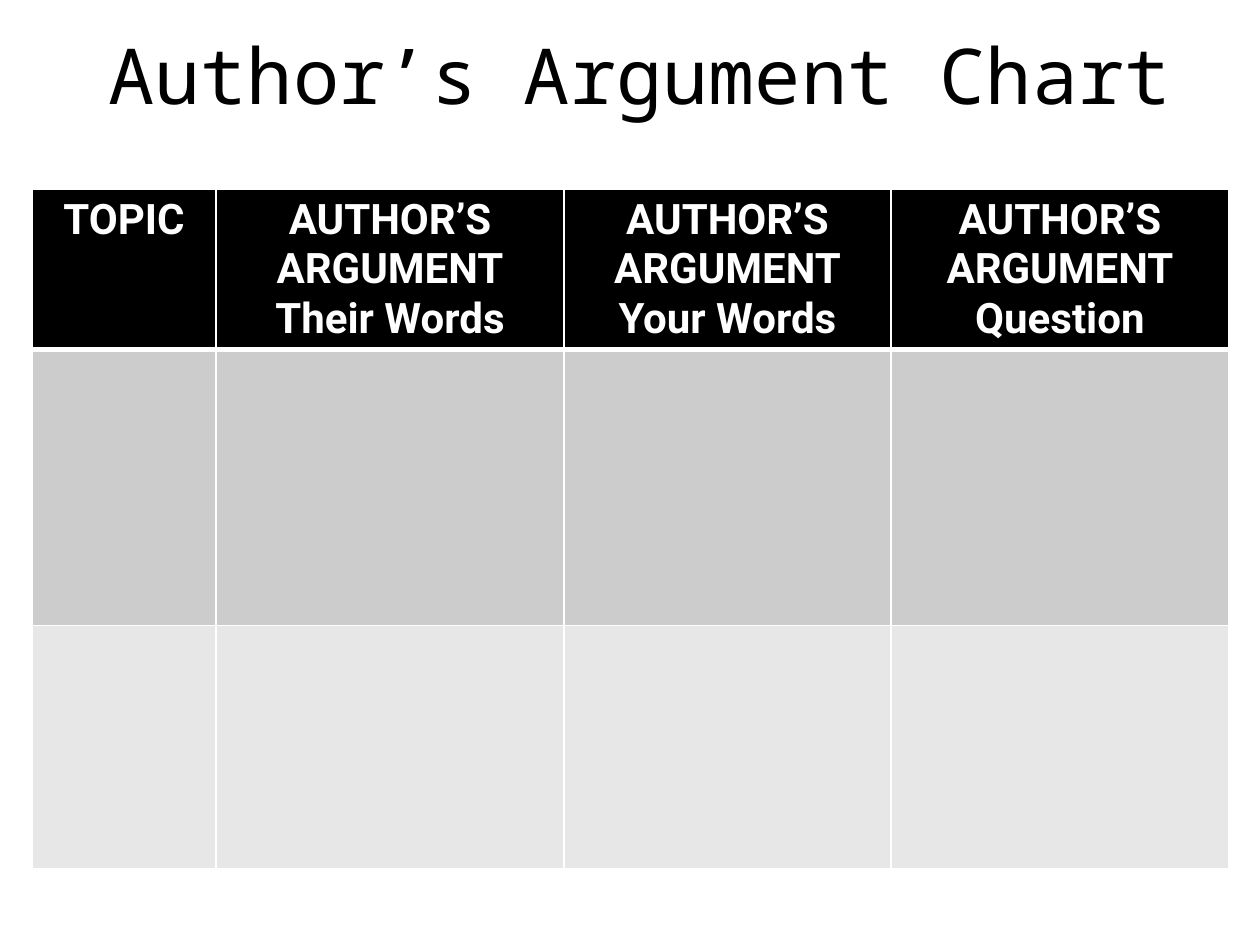
from dataclasses import dataclass

from lxml.etree import SubElement
from pptx import Presentation
from pptx.dml.color import RGBColor as Color
from pptx.enum.text import MSO_ANCHOR as Anchor, PP_ALIGN as Align
from pptx.oxml.ns import qn
from pptx.util import Emu, Pt

PX_PER_INCH = 126


def px(length):
    return Emu(round(length * 914400 / PX_PER_INCH))


@dataclass(frozen=True)
class Theme:
    title_font: str = "Noto Sans Mono"
    header_font: str = "Roboto"
    title_size: int = 44
    header_size: int = 24
    ink: str = "000000"
    paper: str = "FFFFFF"
    row_fills: tuple = ("000000", "CCCCCC", "E7E7E7")
    thin_line: int = 1
    thick_line: int = 3


class SlideBuilder:
    def __init__(self, slide, theme):
        self.slide = slide
        self.theme = theme

    def format_text(self, text_frame, font, size, color, bold=False):
        for paragraph in text_frame.paragraphs:
            paragraph.alignment = Align.CENTER
            for run in paragraph.runs:
                run.font.name = font
                run.font.size = Pt(size)
                run.font.bold = bold
                run.font.color.rgb = Color.from_string(color)

    def title(self, text, left, top, width, height):
        shape = self.slide.shapes.title
        shape.left, shape.top = px(left), px(top)
        shape.width, shape.height = px(width), px(height)
        shape.text_frame.text = text
        shape.text_frame.vertical_anchor = Anchor.MIDDLE
        self.format_text(shape.text_frame, self.theme.title_font,
                         self.theme.title_size, self.theme.ink)

    def cell_border(self, cell, side, points):
        properties = cell._tc.get_or_add_tcPr()
        line = SubElement(properties, qn(f"a:ln{side}"), w=str(Pt(points)))
        fill = SubElement(line, qn("a:solidFill"))
        SubElement(fill, qn("a:srgbClr"), val=self.theme.paper)

    def table(self, headers, left, top, widths, heights):
        theme = self.theme
        frame = self.slide.shapes.add_table(
            len(heights), len(widths), px(left), px(top),
            px(sum(widths)), px(sum(heights)))
        table = frame.table
        table.horz_banding = False
        for column, width in zip(table.columns, widths):
            column.width = px(width)
        for index, (row, height) in enumerate(zip(table.rows, heights)):
            row.height = px(height)
            for cell in row.cells:
                # The rule under the header is thicker than the rest
                for side in "LRTB":
                    under_header = (index, side) in ((0, "B"), (1, "T"))
                    self.cell_border(cell, side, theme.thick_line
                                     if under_header else theme.thin_line)
                cell.fill.solid()
                cell.fill.fore_color.rgb = Color.from_string(theme.row_fills[index])
        for cell, text in zip(table.rows[0].cells, headers):
            cell.text_frame.text = text
            self.format_text(cell.text_frame, theme.header_font,
                             theme.header_size, theme.paper, bold=True)


def main():
    presentation = Presentation()
    presentation.slide_width, presentation.slide_height = px(1260), px(945)
    slide = presentation.slides.add_slide(presentation.slide_layouts[5])
    builder = SlideBuilder(slide, Theme())

    # Title
    builder.title("Author’s Argument Chart", 73, 0, 1134, 147)

    # Worksheet table with two blank rows
    views = ("Their Words", "Your Words", "Question")
    headers = ["TOPIC"] + [f"AUTHOR’S ARGUMENT\n{view}" for view in views]
    builder.table(headers, 32, 189, (184, 348, 327, 338), (136, 276, 243))

    presentation.save("out.pptx")


if __name__ == "__main__":
    main()
